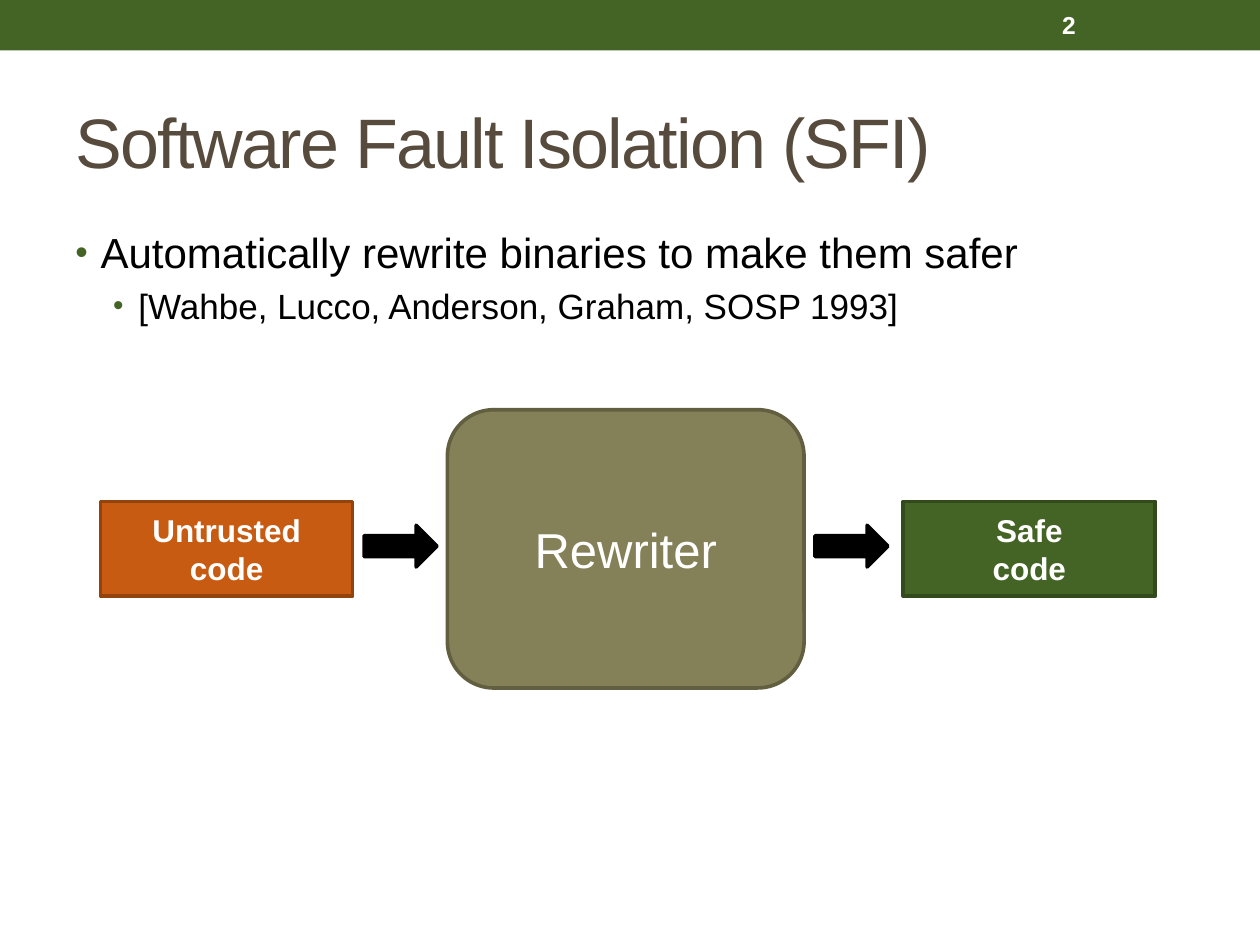
from pptx import Presentation
from pptx.dml.color import RGBColor
from pptx.enum.shapes import MSO_SHAPE
from pptx.enum.text import MSO_ANCHOR, PP_ALIGN
from pptx.oxml.ns import qn
from pptx.util import Cm, Pt
from lxml.etree import SubElement

GREEN = "446426"
WHITE = "FFFFFF"
BLACK = "000000"


def color(value):
    return RGBColor.from_string(value)


def write_text(shape, text, size=18, fill=BLACK, bold=False,
               align=PP_ALIGN.LEFT, anchor=MSO_ANCHOR.MIDDLE):
    frame = shape.text_frame
    frame.word_wrap = True
    frame.vertical_anchor = anchor
    frame.text = text
    for paragraph in frame.paragraphs:
        paragraph.alignment = align
        for run in paragraph.runs:
            font = run.font
            font.name = "Arial"
            font.size = Pt(size)
            font.bold = bold
            font.color.rgb = color(fill)


def add_block(slide, kind, left, top, width, height, fill, line=None):
    shape = slide.shapes.add_shape(kind, Cm(left), Cm(top), Cm(width), Cm(height))
    shape.shadow.inherit = False
    shape.fill.solid()
    shape.fill.fore_color.rgb = color(fill)
    if line:
        shape.line.color.rgb = color(line)
        shape.line.width = Pt(2.08)
    else:
        shape.line.fill.background()
    return shape


def add_bullet(paragraph, level, size, margin):
    paragraph.level = level
    paragraph.space_before = Pt(size * 0.2)
    paragraph.runs[0].font.size = Pt(size)
    properties = paragraph._p.get_or_add_pPr()
    properties.set("marL", str(Cm(margin)))
    properties.set("indent", str(Cm(-0.51)))
    bullet_color = SubElement(properties, qn("a:buClr"))
    SubElement(bullet_color, qn("a:srgbClr"), val=GREEN)
    SubElement(properties, qn("a:buSzPct"), val="85000")
    SubElement(properties, qn("a:buFont"), typeface="Arial")
    SubElement(properties, qn("a:buChar"), char="•")


def add_header(slide):
    add_block(slide, MSO_SHAPE.RECTANGLE, 0, 0, 25.4, 1.02, GREEN)
    number = slide.shapes.add_textbox(Cm(21.16), Cm(0.05), Cm(2.97), Cm(0.91))
    write_text(number, "2", size=14, fill=WHITE, bold=True)


def format_title(slide, text):
    title = slide.shapes.title
    title.left, title.top, title.width, title.height = Cm(1.27), Cm(1.47), Cm(22.86), Cm(2.74)
    write_text(title, text, size=40, fill="564B3C")
    title.text_frame.paragraphs[0].runs[0].font._element.set("spc", "-100")


def add_body(slide):
    body = slide.shapes.add_textbox(Cm(1.27), Cm(4.45), Cm(22.86), Cm(13.54))
    write_text(body, "Automatically rewrite binaries to make them safer\n"
                     "[Wahbe, Lucco, Anderson, Graham, SOSP 1993]", anchor=MSO_ANCHOR.TOP)
    main_point, citation = body.text_frame.paragraphs
    add_bullet(main_point, level=0, size=24, margin=0.51)
    add_bullet(citation, level=1, size=20, margin=1.27)


def add_diagram(slide):
    for text, left, fill, line in (
        ("Untrusted\ncode", 2.03, "C75B12", "93430D"),
        ("Safe\ncode", 18.21, GREEN, "324A1C"),
    ):
        box = add_block(slide, MSO_SHAPE.RECTANGLE, left, 10.11, 5.08, 1.91, fill, line)
        write_text(box, text, fill=WHITE, bold=True, align=PP_ALIGN.CENTER)
    rewriter = add_block(slide, MSO_SHAPE.ROUNDED_RECTANGLE,
                         9.02, 8.26, 7.19, 5.61, "848058", "625F41")
    write_text(rewriter, "Rewriter", size=28, fill=WHITE, align=PP_ALIGN.CENTER)
    for left in (7.34, 16.43):
        add_block(slide, MSO_SHAPE.RIGHT_ARROW, left, 10.59, 1.47, 0.84, BLACK, BLACK)


def main():
    presentation = Presentation()
    presentation.slide_width = Cm(25.4)
    presentation.slide_height = Cm(19.05)
    slide = presentation.slides.add_slide(presentation.slide_layouts[5])
    add_header(slide)
    format_title(slide, "Software Fault Isolation (SFI)")
    add_body(slide)
    add_diagram(slide)
    presentation.save("out.pptx")


if __name__ == "__main__":
    main()
